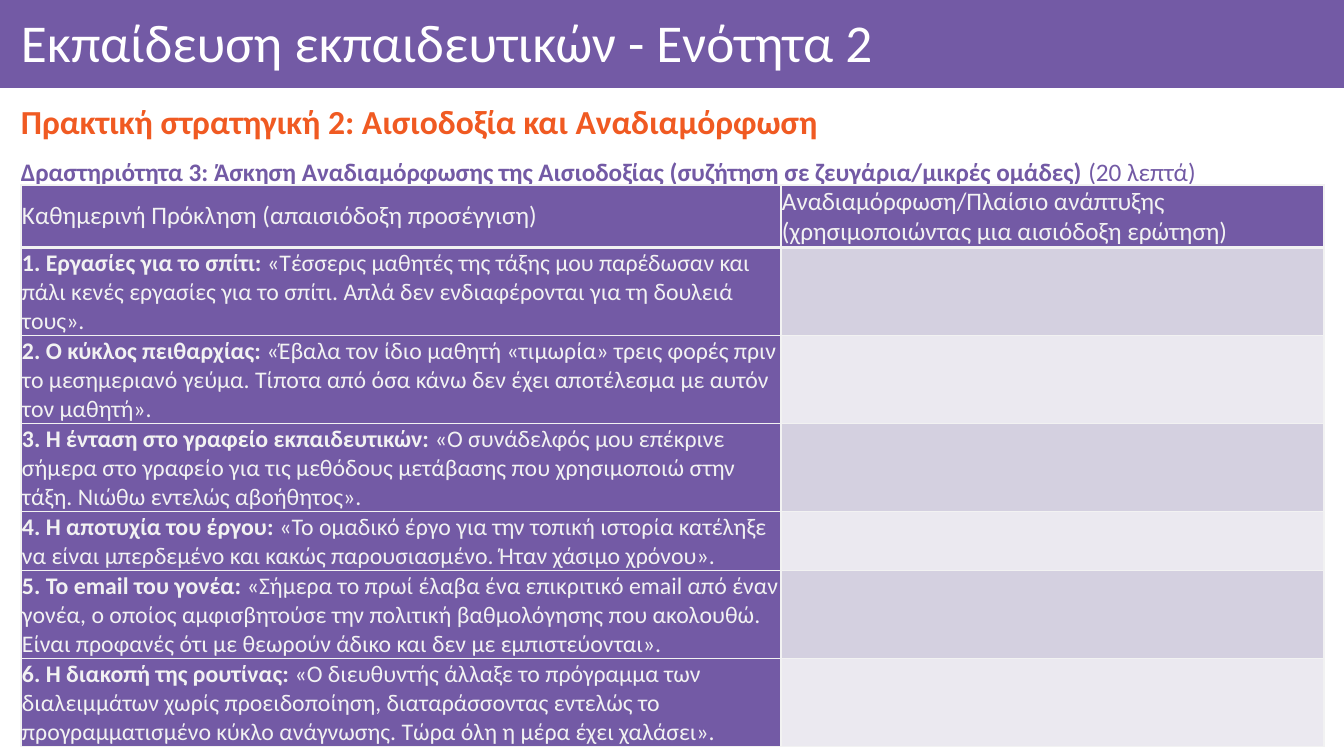
from lxml.etree import SubElement
from pptx import Presentation
from pptx.dml.color import RGBColor
from pptx.enum.shapes import MSO_SHAPE as Preset
from pptx.enum.text import MSO_ANCHOR as Anchor, MSO_AUTO_SIZE as AutoSize, PP_ALIGN as Align
from pptx.oxml import parse_xml
from pptx.oxml.ns import nsdecls, qn
from pptx.util import Pt

EMU_PER_PX = 914400 / 100.8
FONT = "Calibri"
PURPLE, ORANGE, WHITE, PALE = "735AA5", "F05A22", "FFFFFF", "F2F2F2"
STRIPES = ["D4D0E0", "EBE9F0"]

HEADINGS = [
    "Καθημερινή Πρόκληση (απαισιόδοξη προσέγγιση)",
    "Αναδιαμόρφωση/Πλαίσιο ανάπτυξης (χρησιμοποιώντας μια αισιόδοξη ερώτηση)",
]
CHALLENGES = [
    ("1. Εργασίες για το σπίτι: ",
     "«Τέσσερις μαθητές της τάξης μου παρέδωσαν και πάλι κενές εργασίες για το σπίτι. "
     "Απλά δεν ενδιαφέρονται για τη δουλειά τους».", 88),
    ("2. Ο κύκλος πειθαρχίας: ",
     "«Έβαλα τον ίδιο μαθητή «τιμωρία» τρεις φορές πριν το μεσημεριανό γεύμα. "
     "Τίποτα από όσα κάνω δεν έχει αποτέλεσμα με αυτόν τον μαθητή».", 88),
    ("3. Η ένταση στο γραφείο εκπαιδευτικών: ",
     "«Ο συνάδελφός μου επέκρινε σήμερα στο γραφείο για τις μεθόδους μετάβασης "
     "που χρησιμοποιώ στην τάξη. Νιώθω εντελώς αβοήθητος».", 88),
    ("4. Η αποτυχία του έργου: ",
     "«Το ομαδικό έργο για την τοπική ιστορία κατέληξε να είναι μπερδεμένο "
     "και κακώς παρουσιασμένο. Ήταν χάσιμο χρόνου».", 59),
    ("5. Το email του γονέα: ",
     "«Σήμερα το πρωί έλαβα ένα επικριτικό email από έναν γονέα, ο οποίος αμφισβητούσε "
     "την πολιτική βαθμολόγησης που ακολουθώ. Είναι προφανές ότι με θεωρούν άδικο "
     "και δεν με εμπιστεύονται».", 88),
    ("6. Η διακοπή της ρουτίνας: ",
     "«Ο διευθυντής άλλαξε το πρόγραμμα των διαλειμμάτων χωρίς προειδοποίηση, "
     "διαταράσσοντας εντελώς το προγραμματισμένο κύκλο ανάγνωσης. "
     "Τώρα όλη η μέρα έχει χαλάσει».", 88),
]


def px(length):
    return round(length * EMU_PER_PX)


def rgb(colour):
    return RGBColor.from_string(colour)


def fill_with(target, colour):
    target.fill.solid()
    target.fill.fore_color.rgb = rgb(colour)


def add_run(paragraph, text, size, colour, bold=False):
    run = paragraph.add_run()
    run.text = text
    run.font.name = FONT
    run.font.size = Pt(size)
    run.font.bold = bold
    run.font.color.rgb = rgb(colour)


def place(shape, box):
    shape.left, shape.top, shape.width, shape.height = map(px, box)


def title_band(slide, box):
    left, top, width, height = box
    band = slide.shapes.add_shape(Preset.RECTANGLE, *map(px, box))
    band.shadow.inherit = False
    fill_with(band, PURPLE)
    band.line.fill.background()

    title = slide.shapes.title
    title.element.addprevious(band.element)
    place(title, (left + 11, top + 2, width - 27, height - 9))
    frame = title.text_frame
    frame.auto_size = AutoSize.NONE
    frame.word_wrap = True
    frame.vertical_anchor = Anchor.MIDDLE
    frame.margin_left = px(10)
    frame.margin_top = frame.margin_right = frame.margin_bottom = px(6)
    frame.paragraphs[0].alignment = Align.LEFT
    add_run(frame.paragraphs[0], "Εκπαίδευση εκπαιδευτικών - Ενότητα 2", 38, WHITE)


def text_line(slide, box, runs, spacing, anchor, align):
    frame = slide.shapes.add_textbox(*map(px, box)).text_frame
    frame.word_wrap = True
    frame.vertical_anchor = anchor
    paragraph = frame.paragraphs[0]
    paragraph.alignment = align
    paragraph.line_spacing = spacing
    for run in runs:
        add_run(paragraph, *run)


def border_cell(cell, top, bottom):
    properties = cell._tc.get_or_add_tcPr()
    sides = [("L", 1), ("R", 1), ("T", top), ("B", bottom)]
    for index, (side, points) in enumerate(sides):
        line = parse_xml(f'<a:ln{side} {nsdecls("a")} w="{Pt(points)}"/>')
        solid = SubElement(line, qn("a:solidFill"))
        SubElement(solid, qn("a:srgbClr"), val=PALE)
        properties.insert(index, line)


def challenge_table(slide, box):
    rows = [[[(heading, 18, PALE)] for heading in HEADINGS]]
    rows += [[[(name, 17, PALE, True), (quote, 17, PALE)], []] for name, quote, _ in CHALLENGES]
    heights = [62] + [height for _, _, height in CHALLENGES]
    table = slide.shapes.add_table(len(rows), 2, *map(px, box)).table
    table.first_row = table.horz_banding = False
    challenge_width = 760
    table.columns[0].width = px(challenge_width)
    table.columns[1].width = px(box[2] - challenge_width)

    for r, (row, height) in enumerate(zip(rows, heights)):
        table.rows[r].height = px(height)
        for c, runs in enumerate(row):
            cell = table.cell(r, c)
            cell.vertical_anchor = Anchor.MIDDLE
            cell.margin_left = cell.margin_right = px(1)
            cell.margin_top = cell.margin_bottom = px(1)
            fill_with(cell, PURPLE if r == 0 or c == 0 else STRIPES[(r - 1) % 2])
            border_cell(cell, top=3 if r == 1 else 1, bottom=3 if r == 0 else 1)
            for run in runs:
                add_run(cell.text_frame.paragraphs[0], *run)


def main():
    deck = Presentation()
    deck.slide_width, deck.slide_height = px(1344), px(756)
    slide = deck.slides.add_slide(deck.slide_layouts[5])
    title_band(slide, (0, 0, 1344, 88))
    text_line(slide, (11, 94, 1316, 60),
              [("Πρακτική στρατηγική 2: Αισιοδοξία και Αναδιαμόρφωση", 24, ORANGE, True)],
              0.9, Anchor.MIDDLE, Align.JUSTIFY)
    text_line(slide, (11, 136, 1303, 56),
              [("Δραστηριότητα 3: Άσκηση Αναδιαμόρφωσης της Αισιοδοξίας "
                "(συζήτηση σε ζευγάρια/μικρές ομάδες) ", 18, PURPLE, True),
               ("(20 λεπτά)", 18, PURPLE)],
              1.5, Anchor.TOP, Align.LEFT)
    challenge_table(slide, (21, 185, 1303, 561))
    deck.save("out.pptx")


if __name__ == "__main__":
    main()
